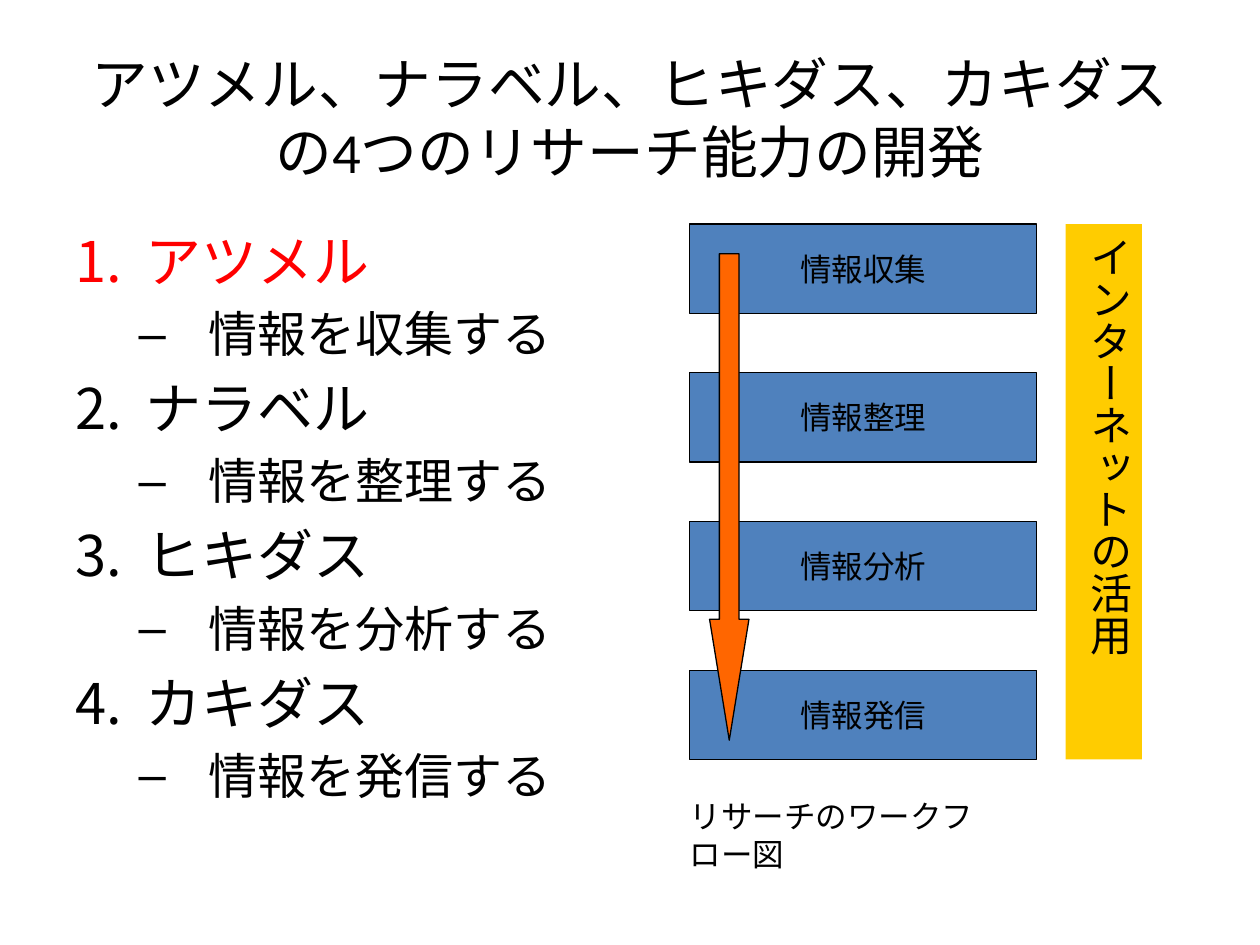
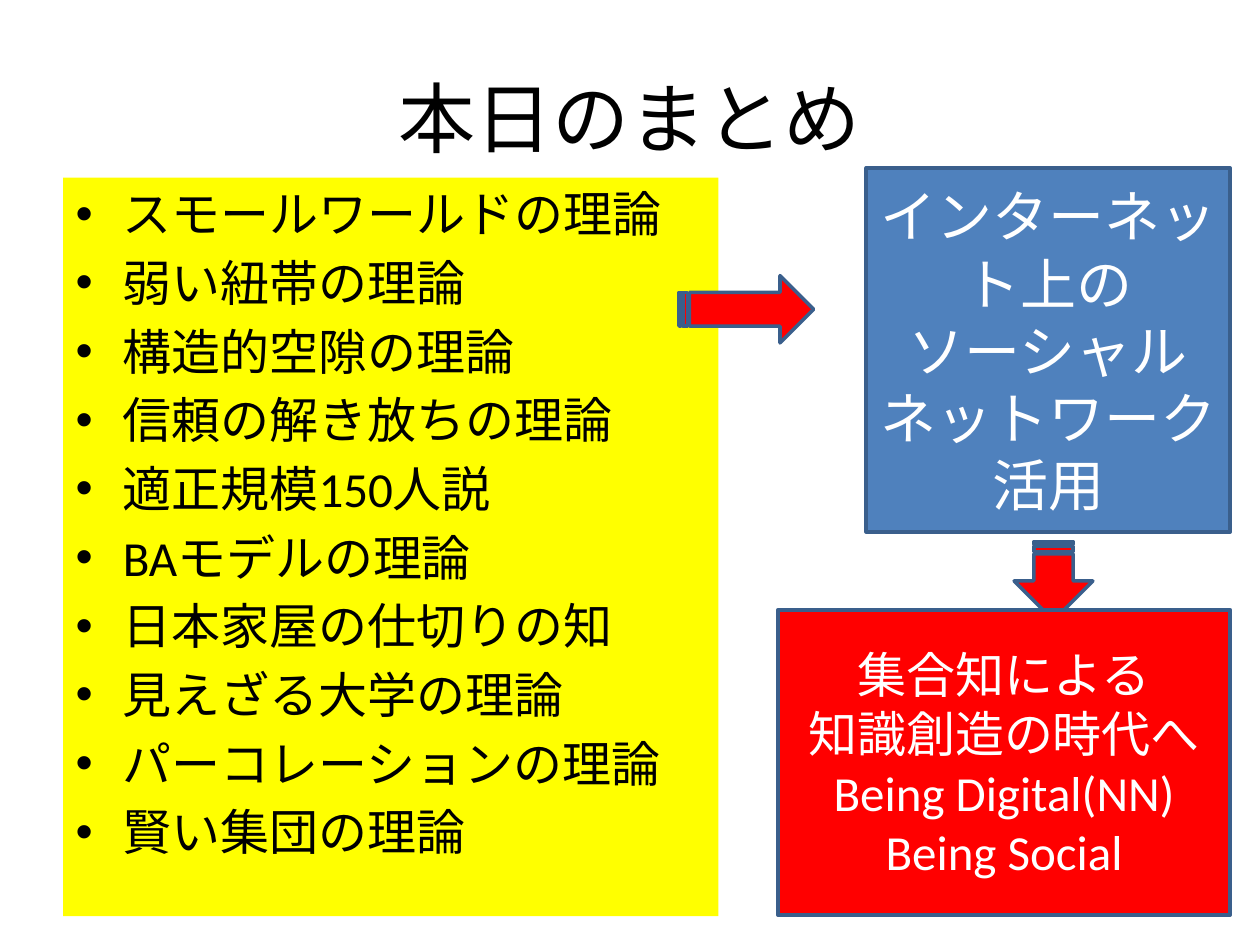
from dataclasses import dataclass

from lxml.etree import SubElement
from pptx import Presentation
from pptx.dml.color import RGBColor
from pptx.enum.lang import MSO_LANGUAGE_ID as Lang
from pptx.enum.shapes import MSO_SHAPE as Shape
from pptx.enum.text import MSO_ANCHOR as Anchor, MSO_AUTO_SIZE as AutoSize, PP_ALIGN as Align
from pptx.oxml.ns import qn
from pptx.util import Pt

RESEARCH_TITLE = "アツメル、ナラベル、ヒキダス、カキダス\vの4つのリサーチ能力の開発"
ABILITIES = [
    ("アツメル", "情報を収集する"),
    ("ナラベル", "情報を整理する"),
    ("ヒキダス", "情報を分析する"),
    ("カキダス", "情報を発信する"),
]
WORKFLOW = ["情報収集", "情報整理", "情報分析", "情報発信"]
WORKFLOW_CAPTION = "リサーチのワークフロー図"
INTERNET_USE = "インターネットの活用"

SUMMARY_TITLE = "本日のまとめ"
THEORIES = [
    "スモールワールドの理論",
    "弱い紐帯の理論",
    "構造的空隙の理論",
    "信頼の解き放ちの理論",
    "適正規模150人説",
    "BAモデルの理論",
    "日本家屋の仕切りの知",
    "見えざる大学の理論",
    "パーコレーションの理論",
    "賢い集団の理論",
]
SOCIAL_NETWORK = ["インターネット上の", "ソーシャルネットワーク", "活用"]
NEW_ERA = ["集合知による", "知識創造の時代へ", "Being Digital(NN)", "Being Social"]


@dataclass(frozen=True)
class Theme:
    font: str = "Calibri"
    black: str = "000000"
    white: str = "FFFFFF"
    red: str = "FF0000"
    blue: str = "4F81BD"
    navy: str = "3A5F8C"
    orange: str = "FF6600"
    gold: str = "FFCC00"
    yellow: str = "FFFF00"
    title: float = 44
    long_title: float = 32.4
    large: float = 32
    medium: float = 28
    vertical: float = 24
    small: float = 18


THEME = Theme()
TITLE_AREA = (36, 21.6, 648, 90)
THIN = (THEME.black, 0.75)
THICK = (THEME.navy, 2)


def set_values(target, values):
    for name, value in values.items():
        setattr(target, name, value)


def place(part, area):
    sides = ("left", "top", "width", "height")
    set_values(part, {side: Pt(length) for side, length in zip(sides, area)})


def paint(part, colour):
    part.fill.solid()
    part.fill.fore_color.rgb = RGBColor.from_string(colour)


def write(paragraph, text, size, colour=THEME.black, align=None):
    paragraph.text = text
    paragraph.alignment = align
    for run in paragraph.runs:
        set_values(run.font, {"name": THEME.font, "size": Pt(size), "language_id": Lang.JAPANESE})
        run.font.color.rgb = RGBColor.from_string(colour)
    for line_break in paragraph._p.findall(qn("a:br")):
        SubElement(line_break, qn("a:rPr"), sz=str(round(size * 100)))


def write_lines(frame, lines, size, colour=THEME.black, align=None):
    for index, line in enumerate(lines):
        paragraph = frame.add_paragraph() if index else frame.paragraphs[0]
        write(paragraph, line, size, colour, align)


def set_bullet(paragraph, margin, hanging, tag, **attributes):
    properties = paragraph._p.get_or_add_pPr()
    properties.set("marL", str(Pt(margin)))
    properties.set("indent", str(-Pt(hanging)))
    SubElement(properties, qn(f"a:{tag}"), **attributes)


def add_titled_slide(deck, title, size, body_area):
    slide = deck.slides.add_slide(deck.slide_layouts[1])
    body = slide.placeholders[1]
    for part, area in ((slide.shapes.title, TITLE_AREA), (body, body_area)):
        place(part, area)
        part.text_frame.auto_size = AutoSize.NONE
    slide.shapes.title.text_frame.vertical_anchor = Anchor.MIDDLE
    write_lines(slide.shapes.title.text_frame, [title], size, align=Align.CENTER)
    return slide, body


def add_block(slide, kind, area, fill, line=None):
    block = slide.shapes.add_shape(kind, *map(Pt, area))
    block.shadow.inherit = False
    paint(block, fill)
    if line:
        colour, width = line
        block.line.color.rgb = RGBColor.from_string(colour)
        block.line.width = Pt(width)
    else:
        block.line.fill.background()
    return block


def add_box(slide, area, fill, line, lines, size, colour, wrap=True):
    box = add_block(slide, Shape.RECTANGLE, area, fill, line)
    set_values(box.text_frame, {"word_wrap": wrap, "vertical_anchor": Anchor.MIDDLE})
    write_lines(box.text_frame, lines, size, colour, Align.CENTER)


def build_research(deck):
    slide, body = add_titled_slide(deck, RESEARCH_TITLE, THEME.long_title, (36, 126, 330, 356.5))
    frame = body.text_frame
    for index, (ability, action) in enumerate(ABILITIES):
        heading = frame.add_paragraph() if index else frame.paragraphs[0]
        write(heading, ability, THEME.large, THEME.black if index else THEME.red)
        set_bullet(heading, 40, 40, "buAutoNum", type="arabicPeriod")
        detail = frame.add_paragraph()
        detail.level = 1
        write(detail, action, THEME.medium)
        set_bullet(detail, 76, 40, "buChar", char="–")

    left, top, width, height, pitch = 394, 128, 198.5, 51, 85
    for index, step in enumerate(WORKFLOW):
        add_box(slide, (left, top + index * pitch, width, height), THEME.blue, THIN,
                [step], THEME.small, THEME.black, wrap=False)

    flow = add_block(slide, Shape.DOWN_ARROW, (405.5, 145, 22.5, 278), THEME.orange, THIN)
    flow.adjustments[0] = 0.5
    flow.adjustments[1] = 3.07

    caption = slide.shapes.add_textbox(*map(Pt, (387, 452, 211.5, 29)))
    caption.text_frame.word_wrap = True
    write_lines(caption.text_frame, [WORKFLOW_CAPTION], THEME.small)

    flow_height = pitch * (len(WORKFLOW) - 1) + height
    internet = add_block(slide, Shape.RECTANGLE, (609, top, 43.5, flow_height), THEME.gold)
    set_values(internet.text_frame, {"word_wrap": True, "vertical_anchor": Anchor.TOP})
    internet.text_frame._txBody.bodyPr.set("vert", "eaVert")
    write_lines(internet.text_frame, [INTERNET_USE], THEME.vertical, align=Align.LEFT)


def build_summary(deck):
    slide, body = add_titled_slide(deck, SUMMARY_TITLE, THEME.title, (36, 101.5, 374.5, 422))
    paint(body, THEME.yellow)
    write_lines(body.text_frame, THEORIES, THEME.medium)

    add_box(slide, (495, 96, 208, 208), THEME.blue, THICK, SOCIAL_NETWORK, THEME.large, THEME.white)
    for area, rotation in (((388, 157.5, 77, 38.5), 0), ((579.5, 309.5, 45, 45), 90)):
        arrow = add_block(slide, Shape.STRIPED_RIGHT_ARROW, area, THEME.red, THICK)
        arrow.rotation = rotation
    add_box(slide, (444.5, 348.5, 258.5, 174.5), THEME.red, THICK, NEW_ERA, THEME.medium, THEME.white)


def main():
    deck = Presentation()
    set_values(deck, {"slide_width": Pt(720), "slide_height": Pt(540)})
    build_research(deck)
    build_summary(deck)
    deck.save("out.pptx")


if __name__ == "__main__":
    main()
